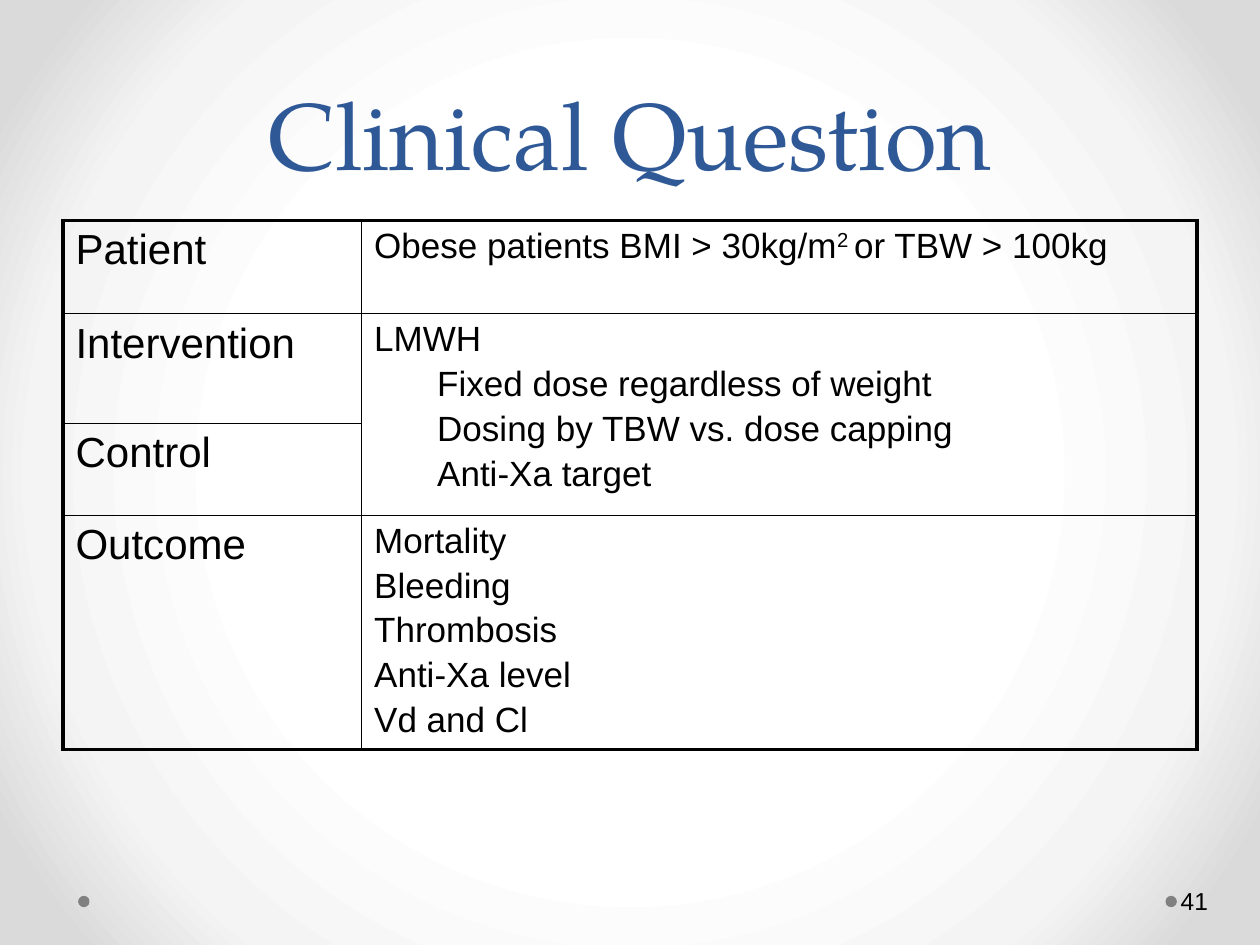
"""Build the Clinical Question slide with its patient, intervention, control and outcome table."""
from dataclasses import dataclass

from lxml import etree
from pptx import Presentation
from pptx.dml.color import RGBColor
from pptx.enum import shapes, text
from pptx.oxml import ns
from pptx.util import Inches, Pt


@dataclass(frozen=True)
class Theme:
    title_color: str = "2F5897"
    ink: str = "000000"
    dot: str = "808080"
    backdrop: tuple = ((50, "FFFFFF"), (76, "F4F4F4"), (92, "DADADA"))
    title_font: str = "TeX Gyre Pagella"
    body_font: str = "Arial"
    title_size: float = 54
    label_size: float = 24
    detail_size: float = 20
    number_size: float = 14
    outer_rule: float = 2.25
    inner_rule: float = 1


theme = Theme()


def write(paragraph, words, size, font=theme.body_font, color=theme.ink, raised=False):
    run = paragraph.add_run()
    run.text = words
    run.font.size = Pt(size)
    run.font.name = font
    run.font.color.rgb = RGBColor.from_string(color)
    if raised:
        run.font._element.set("baseline", "30000")


def rule_cell(cell, widths):
    properties = cell._tc.get_or_add_tcPr()
    for position, (side, width) in enumerate(widths.items()):
        line = etree.Element(ns.qn(f"a:ln{side}"), w=str(Pt(width)))
        solid = etree.SubElement(line, ns.qn("a:solidFill"))
        etree.SubElement(solid, ns.qn("a:srgbClr"), val=theme.ink)
        properties.insert(position, line)


deck = Presentation()
deck.slide_width, deck.slide_height = Inches(10), Inches(7.5)
slide = deck.slides.add_slide(deck.slide_layouts[5])

slide.background.fill.gradient()
gradient = slide.element.find(".//" + ns.qn("a:gradFill"))
for child in list(gradient):
    gradient.remove(child)
stops = etree.SubElement(gradient, ns.qn("a:gsLst"))
for percent, shade in theme.backdrop:
    stop = etree.SubElement(stops, ns.qn("a:gs"), pos=str(percent * 1000))
    etree.SubElement(stop, ns.qn("a:srgbClr"), val=shade)
circle = etree.SubElement(gradient, ns.qn("a:path"), path="circle")
etree.SubElement(circle, ns.qn("a:fillToRect"), l="50000", t="50000", r="50000", b="50000")

for left in (9.25, 0.62):
    dot = slide.shapes.add_shape(
        shapes.MSO_SHAPE.OVAL, Inches(left), Inches(7.11), Inches(0.09), Inches(0.09))
    dot.shadow.inherit = False
    dot.fill.solid()
    dot.fill.fore_color.rgb = RGBColor.from_string(theme.dot)
    dot.line.fill.background()

title = slide.shapes.title
title.left, title.top, title.width, title.height = Inches(0.5), Inches(0.3), Inches(9), Inches(1.25)
title.text_frame.vertical_anchor = text.MSO_ANCHOR.BOTTOM
heading = title.text_frame.paragraphs[0]
heading.alignment = text.PP_ALIGN.CENTER
heading.line_spacing = Pt(58)
write(heading, "Clinical Question", theme.title_size, theme.title_font, theme.title_color)

columns = (2.37, 6.63)
rows = (0.74, 0.87, 0.73, 1.86)
questions = (
    ("Patient", ()),
    ("Intervention", (
        ("LMWH", 0),
        ("Fixed dose regardless of weight", 1),
        ("Dosing by TBW vs. dose capping", 1),
        ("Anti-Xa target", 1),
    )),
    ("Control", ()),
    ("Outcome", tuple((outcome, 0) for outcome in (
        "Mortality", "Bleeding", "Thrombosis", "Anti-Xa level", "Vd and Cl"))),
)

grid = slide.shapes.add_table(
    len(rows), len(columns), Inches(0.5), Inches(1.75), Inches(sum(columns)), Inches(sum(rows))).table
grid.first_row = grid.horz_banding = False
for column, width in zip(grid.columns, columns):
    column.width = Inches(width)
for row, height in zip(grid.rows, rows):
    row.height = Inches(height)

last_row, last_column = len(rows) - 1, len(columns) - 1
for r in range(len(rows)):
    for c in range(len(columns)):
        cell = grid.cell(r, c)
        cell.fill.background()
        outer_sides = {"L": c == 0, "R": c == last_column, "T": r == 0, "B": r == last_row}
        rule_cell(cell, {side: theme.outer_rule if outer else theme.inner_rule
                         for side, outer in outer_sides.items()})
grid.cell(1, 1).merge(grid.cell(2, 1))

for r, (label, details) in enumerate(questions):
    write(grid.cell(r, 0).text_frame.paragraphs[0], label, theme.label_size)
    frame = grid.cell(r, 1).text_frame
    for position, (detail, level) in enumerate(details):
        paragraph = frame.add_paragraph() if position else frame.paragraphs[0]
        if position:
            paragraph.space_before = Pt(3.3)
        if level:
            paragraph.level = level
            indent = paragraph._p.get_or_add_pPr()
            indent.set("marL", str(Inches(0.5)))
            indent.set("indent", "0")
        write(paragraph, detail, theme.detail_size)

population = grid.cell(0, 1).text_frame.paragraphs[0]
write(population, "Obese patients BMI > 30kg/m", theme.detail_size)
write(population, "2 ", theme.detail_size, raised=True)
write(population, "or TBW > 100kg", theme.detail_size)

page_number = slide.shapes.add_textbox(Inches(9.34), Inches(6.95), Inches(0.61), Inches(0.4)).text_frame
page_number.word_wrap = True
page_number.vertical_anchor = text.MSO_ANCHOR.MIDDLE
page_number.margin_left = Inches(0.03)
page_number.margin_right = page_number.margin_top = page_number.margin_bottom = Inches(0.05)
write(page_number.paragraphs[0], "41", theme.number_size)

deck.save("out.pptx")
